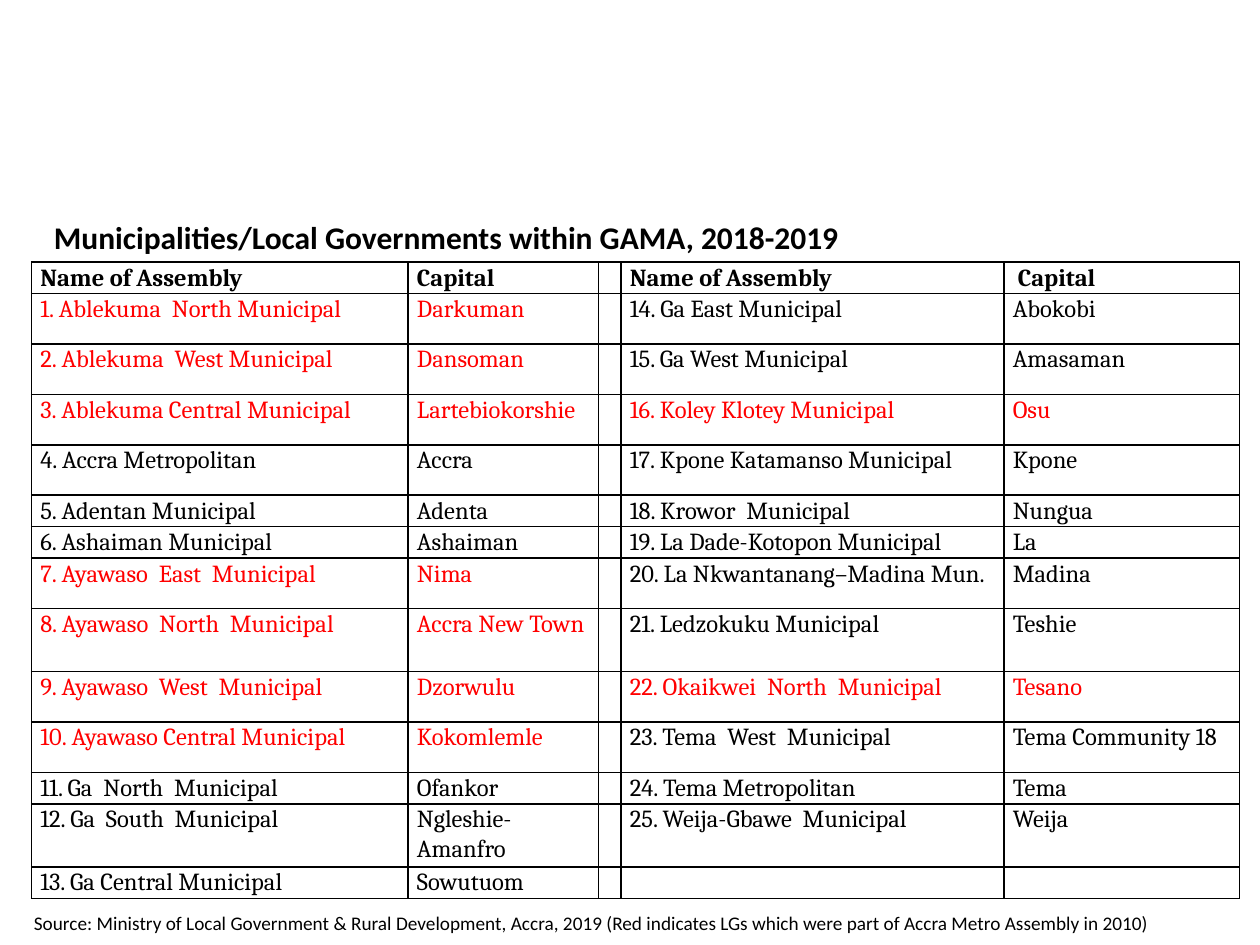
"""Build a slide listing the municipalities within GAMA and their capitals."""
from lxml import etree
from pptx import Presentation
from pptx import util as u
from pptx.dml.color import RGBColor
from pptx.enum import text
from pptx.oxml.ns import qn

PX = 9144
COLORS = {"ink": "000000", "red": "FF0000"}
FORMER_ACCRA = {1, 2, 3, 7, 8, 9, 10, 16, 22}
ASSEMBLIES = [
    ("Ablekuma  North Municipal", "Darkuman"),
    ("Ablekuma  West Municipal", "Dansoman"),
    ("Ablekuma Central Municipal", "Lartebiokorshie"),
    ("Accra Metropolitan", "Accra"),
    ("Adentan Municipal", "Adenta"),
    ("Ashaiman Municipal", "Ashaiman"),
    ("Ayawaso  East  Municipal", "Nima"),
    ("Ayawaso  North  Municipal", "Accra New Town"),
    ("Ayawaso  West  Municipal", "Dzorwulu"),
    ("Ayawaso Central Municipal", "Kokomlemle"),
    ("Ga  North  Municipal", "Ofankor"),
    ("Ga  South  Municipal", "Ngleshie-Amanfro"),
    ("Ga Central Municipal", "Sowutuom"),
    ("Ga East Municipal", "Abokobi"),
    ("Ga West Municipal", "Amasaman"),
    ("Koley Klotey Municipal", "Osu"),
    ("Kpone Katamanso Municipal", "Kpone"),
    ("Krowor  Municipal", "Nungua"),
    ("La Dade-Kotopon Municipal", "La"),
    ("La Nkwantanang–Madina Mun.", "Madina"),
    ("Ledzokuku Municipal", "Teshie"),
    ("Okaikwei  North  Municipal", "Tesano"),
    ("Tema  West  Municipal", "Tema Community 18"),
    ("Tema Metropolitan", "Tema"),
    ("Weija-Gbawe  Municipal", "Weija"),
]
COLUMNS = [299, 151, 17, 304, 187]
ROWS = [25, 40, 40, 40, 40, 25, 25, 40, 50, 40, 40, 25, 50, 25]
NOTE = ("Source: Ministry of Local Government & Rural Development, Accra, 2019 "
        "(Red indicates LGs which were part of Accra Metro Assembly in 2010)")


def write(para, words, color, **formats):
    span = para.add_run()
    span.text = words
    span.font.color.rgb = RGBColor.from_string(COLORS[color])
    for name, value in formats.items():
        setattr(span.font, name, value)


def add_border(cell):
    props = cell._tc.get_or_add_tcPr()
    for index, side in enumerate(("a:lnL", "a:lnR", "a:lnT", "a:lnB")):
        line = etree.Element(qn(side), w=str(u.Pt(1)))
        fill = etree.SubElement(line, qn("a:solidFill"))
        etree.SubElement(fill, qn("a:srgbClr"), val=COLORS["ink"])
        props.insert(index, line)


deck = Presentation()
deck.slide_width, deck.slide_height = 1000 * PX, 750 * PX
page = deck.slides.add_slide(deck.slide_layouts[6])

frame = page.shapes.add_table(len(ROWS), len(COLUMNS), 25 * PX, 208 * PX,
                              sum(COLUMNS) * PX, sum(ROWS) * PX)
table = frame.table
table.first_row = table.horz_banding = False
for column, width in zip(table.columns, COLUMNS):
    column.width = width * PX
for row, height in zip(table.rows, ROWS):
    row.height = height * PX

entries = {}
half = len(ROWS) - 1
for left in (0, 3):
    entries[0, left] = ("Name of Assembly", "ink")
    entries[0, left + 1] = ("Capital", "ink")
for number, (assembly, capital) in enumerate(ASSEMBLIES, 1):
    side, row = divmod(number - 1, half)
    color = "red" if number in FORMER_ACCRA else "ink"
    entries[row + 1, side * 3] = (f"{number}. {assembly}", color)
    entries[row + 1, side * 3 + 1] = (capital, color)

for row in range(len(ROWS)):
    for column in range(len(COLUMNS)):
        cell = table.cell(row, column)
        cell.fill.background()
        add_border(cell)
        margins = {"margin_left": 7, "margin_right": 7, "margin_top": 0, "margin_bottom": 0}
        if (row, column) == (0, 4):
            margins["margin_left"] = 11
        for name, value in margins.items():
            setattr(cell, name, value * PX)
        para = cell.text_frame.paragraphs[0]
        if (row, column) in entries:
            para.line_spacing = 1.07
            words, color = entries[row, column]
            write(para, words, color, name="Cambria", size=u.Pt(14), bold=row == 0)
        else:
            etree.SubElement(para._p, qn("a:endParaRPr"), sz="1000")

captions = [
    ((33, 168, 733, 40), "Municipalities/Local Governments within GAMA, 2018-2019", 18, True, {}),
    ((17, 717, 925, 30), NOTE, 11, False, {"line_spacing": 1.07, "space_after": u.Pt(8)}),
]
for place, words, size, bold, spacing in captions:
    box = page.shapes.add_textbox(*(value * PX for value in place))
    box.text_frame.word_wrap = True
    box.text_frame.auto_size = text.MSO_AUTO_SIZE.SHAPE_TO_FIT_TEXT
    para = box.text_frame.paragraphs[0]
    for name, value in spacing.items():
        setattr(para, name, value)
    write(para, words, "ink", name="Calibri", size=u.Pt(size), bold=bold)

deck.save("out.pptx")
